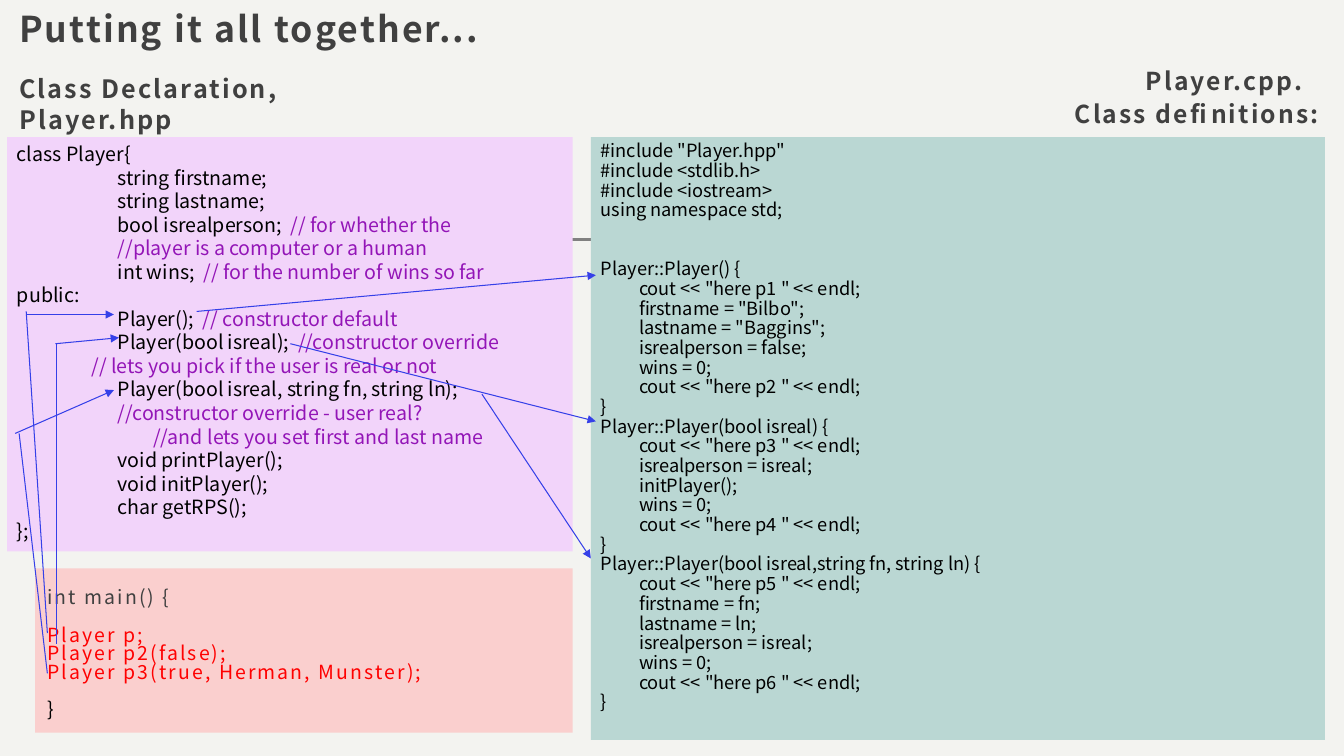
from dataclasses import dataclass

from lxml.etree import SubElement
from pptx import Presentation
from pptx.dml.color import RGBColor
from pptx.enum.shapes import MSO_CONNECTOR, MSO_SHAPE
from pptx.enum.text import MSO_ANCHOR, PP_ALIGN
from pptx.oxml.ns import qn
from pptx.util import Inches, Pt

FONT = "Noto Sans CJK JP"
BLACK, GRAY, PURPLE, RED, BLUE = "000000", "404040", "9315B7", "FF0000", "3540E8"


@dataclass
class Line:
    """One paragraph: code, then an optional purple comment."""
    code: str = ""
    note: str = ""
    left: float = 0
    right: float = 0
    gap: float = 0
    color: str = BLACK
    space: float = 1


@dataclass
class Block:
    """A text area; one without a fill is a heading."""
    box: tuple[float, float, float, float]
    lines: list[Line]
    size: float
    fill: str = ""
    space: float = 1
    track: float = 0
    pad: bool = True
    align: PP_ALIGN = PP_ALIGN.LEFT


@dataclass
class Link:
    start: tuple[float, float]
    end: tuple[float, float]
    head: bool = True
    color: str = BLUE
    width: float = 0.75


def rgb(code: str) -> RGBColor:
    return RGBColor.from_string(code)


def add_run(par, text: str, size: float, color: str, bold: bool, track: float) -> None:
    run = par.add_run()
    run.text = text
    font = run.font
    font.name, font.size, font.bold = FONT, Pt(size), bold
    font.color.rgb = rgb(color)
    if track:
        font._element.set("spc", str(round(track * 100)))


def add_block(slide, block: Block) -> None:
    box = [Inches(v) for v in block.box]
    if block.fill:
        shape = slide.shapes.add_shape(MSO_SHAPE.RECTANGLE, *box)
        shape.shadow.inherit = False
        shape.fill.solid()
        shape.fill.fore_color.rgb = rgb(block.fill)
        shape.line.fill.background()
    else:
        shape = slide.shapes.add_textbox(*box)
    frame = shape.text_frame
    frame.word_wrap = True
    frame.vertical_anchor = MSO_ANCHOR.TOP if block.fill else MSO_ANCHOR.BOTTOM
    if block.pad:
        frame.margin_left = frame.margin_top = frame.margin_right = Inches(0.12)
        frame.margin_bottom = Inches(0.1)
    for i, line in enumerate(block.lines):
        par = frame.add_paragraph() if i else frame.paragraphs[0]
        par.alignment = block.align
        par.line_spacing = block.space * line.space
        par.space_before = Pt(line.gap)
        props = par._p.get_or_add_pPr()
        props.set("marL", str(Inches(line.left)))
        props.set("marR", str(Inches(line.right)))
        bold = not block.fill
        if line.code:
            add_run(par, line.code, block.size, line.color, bold, block.track)
        if line.code and line.note:
            add_run(par, " ", block.size, PURPLE, bold, 3)
        if line.note:
            add_run(par, line.note, block.size, PURPLE, bold, block.track)


def add_link(slide, link: Link) -> None:
    ends = [Inches(v) for v in link.start + link.end]
    wire = slide.shapes.add_connector(MSO_CONNECTOR.STRAIGHT, *ends)
    wire.line.color.rgb = rgb(link.color)
    wire.line.width = Pt(link.width)
    props = wire._element.spPr
    if link.head:
        SubElement(props.find(qn("a:ln")), qn("a:tailEnd"), type="triangle")
    SubElement(props, qn("a:effectLst"))


def body(*codes: str) -> list[Line]:
    """Indented statements and the closing brace of a function."""
    return [Line(code, left=0.38) for code in codes] + [Line("}")]


HEADER = [
    Line("class Player{"),
    Line("string firstname;", left=1),
    Line("string lastname;", left=1),
    Line("bool isrealperson;", "// for whether the", left=1),
    Line(note="//player is a computer or a human", left=1),
    Line("int wins;", "// for the number of wins so far", left=1),
    Line("public:"),
    Line("Player();", "// constructor default", left=1),
    Line("Player(bool isreal);", "//constructor override", left=1),
    Line(note="// lets you pick if the user is real or not", left=0.74),
    Line("Player(bool isreal, string fn, string ln);", left=1),
    Line(note="//constructor override - user real?", left=1),
    Line(note="//and lets you set first and last name", left=1.35),
    Line("void printPlayer();", left=1),
    Line("void initPlayer();", left=1),
    Line("char getRPS();", left=1),
    Line("};"),
]

SOURCE = [
    Line('#include "Player.hpp"'),
    Line("#include <stdlib.h>"),
    Line("#include <iostream>"),
    Line("using namespace std;"),
    Line("Player::Player() {", gap=28),
    *body('cout << "here p1 " << endl;', 'firstname = "Bilbo";',
          'lastname = "Baggins";', "isrealperson = false;", "wins = 0;",
          'cout << "here p2 " << endl;'),
    Line("Player::Player(bool isreal) {"),
    *body('cout << "here p3 " << endl;', "isrealperson = isreal;",
          "initPlayer();", "wins = 0;", 'cout << "here p4 " << endl;'),
    Line("Player::Player(bool isreal,string fn, string ln) {"),
    *body('cout << "here p5 " << endl;', "firstname = fn;", "lastname = ln;",
          "isrealperson = isreal;", "wins = 0;", 'cout << "here p6 " << endl;'),
]

MAIN = [
    Line("int main() {", color=GRAY, space=1.5),
    Line("Player p;", color=RED, gap=13.3),
    Line("Player p2(false);", color=RED),
    Line("Player p3(true, Herman, Munster);", color=RED),
    Line("}", gap=13.3),
]

PARTS = [
    Link((2.1, 2.38), (11.69, 2.38), False, "808080", 2),
    Block((0.07, 0.59, 5.61, 0.84),
          [Line("Class Declaration,", color=GRAY), Line("Player.hpp", color=GRAY)],
          18, track=1.5),
    Block((0.07, 1.36, 5.61, 4.11), HEADER, 14, "F2D4FA", pad=False),
    Block((7.48, 0.46, 5.72, 0.91),
          [Line("Player.cpp.", color=GRAY, right=0.16),
           Line("Class definitions:", color=GRAY)],
          17.6, space=1.1, track=1.5, align=PP_ALIGN.RIGHT),
    Block((5.86, 1.36, 7.28, 5.98), SOURCE, 13, "BAD7D3", space=0.9, pad=False),
    Link((1.95, 3.09), (5.91, 2.73)),
    Link((2.88, 3.41), (5.91, 4.18)),
    Link((4.78, 3.91), (5.86, 5.54)),
    Block((0.07, -0.07, 11.99, 0.66),
          [Line("Putting it all together...", color=GRAY)], 25.4, track=1.5),
    Block((0.35, 5.64, 5.33, 1.63), MAIN, 13.9, "FACFCE", space=0.8, track=1.5),
    Link((0.27, 3.12), (1.13, 3.12)),
    Link((0.26, 3.09), (0.47, 6.28), False),
    Link((0.55, 3.41), (1.18, 3.35)),
    Link((0.56, 3.41), (0.56, 6.39), False),
    Link((0.15, 4.3), (1.13, 3.87)),
    Link((0.19, 4.3), (0.47, 6.68), False),
]


def main() -> None:
    deck = Presentation()
    deck.slide_width, deck.slide_height = Inches(13.33), Inches(7.5)
    slide = deck.slides.add_slide(deck.slide_layouts[6])
    slide.background.fill.solid()
    slide.background.fill.fore_color.rgb = rgb("F3F3F0")
    for part in PARTS:
        if isinstance(part, Block):
            add_block(slide, part)
        else:
            add_link(slide, part)
    deck.save("out.pptx")


if __name__ == "__main__":
    main()
